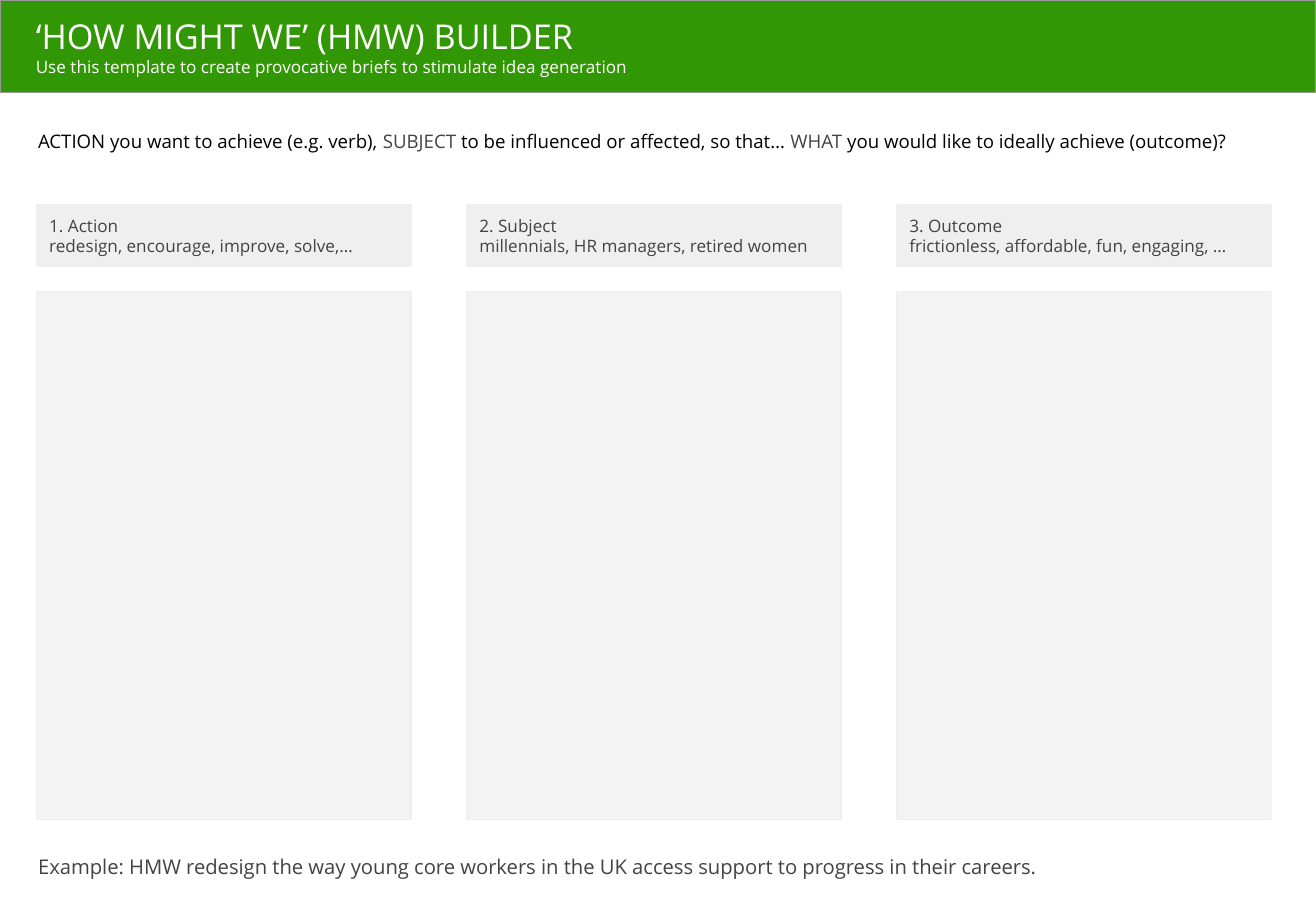
from pptx import Presentation
from pptx.dml.color import RGBColor
from pptx.enum.shapes import MSO_SHAPE
from pptx.enum.text import MSO_ANCHOR, PP_ALIGN
from pptx.util import Inches, Pt

RECTANGLE = MSO_SHAPE.RECTANGLE
MIDDLE = MSO_ANCHOR.MIDDLE
TOP = MSO_ANCHOR.TOP
LEFT = PP_ALIGN.LEFT

FONT = "Open Sans"
WHITE, BLACK, DARK_GREY = "FFFFFF", "000000", "434343"
GREEN, MID_GREY, LIGHT_GREY, PALE_GREY = "319704", "999999", "EFEFEF", "F3F3F3"

prs = Presentation()
prs.slide_width, prs.slide_height = Inches(11.75), Inches(8.25)
slide = prs.slides.add_slide(prs.slide_layouts[6])


def add_panel(left, top, width, height, fill, line):
    panel = slide.shapes.add_shape(
        RECTANGLE, Inches(left), Inches(top), Inches(width), Inches(height))
    panel.shadow.inherit = False
    panel.fill.solid()
    panel.fill.fore_color.rgb = RGBColor.from_string(fill)
    panel.line.color.rgb = RGBColor.from_string(line)
    panel.line.width = Pt(0.75)
    return panel


def write(shape, paragraphs, anchor=TOP):
    """Fill a shape with paragraphs, each a size and a list of (text, colour) runs."""
    frame = shape.text_frame
    frame.word_wrap = True
    frame.vertical_anchor = anchor
    frame.margin_left = frame.margin_right = Inches(0.11)
    frame.margin_top = frame.margin_bottom = Inches(0.11)
    for index, (size, runs) in enumerate(paragraphs):
        paragraph = frame.add_paragraph() if index else frame.paragraphs[0]
        paragraph.alignment = LEFT
        paragraph.font.name = FONT
        paragraph.font.size = Pt(size)
        for text, color in runs:
            run = paragraph.add_run()
            run.text = text
            run.font.color.rgb = RGBColor.from_string(color)


# Header band and the free text
add_panel(0, 0, 11.75, 0.83, GREEN, MID_GREY)

texts = [
    ((0.21, 0.03, 6.57, 0.78), [
        (22, [("‘HOW MIGHT WE’ (HMW) BUILDER", WHITE)]),
        (11, [("Use this template to create provocative briefs to stimulate idea generation", WHITE)]),
    ]),
    ((0.23, 1.06, 11.28, 0.42), [
        (12, [
            ("ACTION you want to achieve (e.g. verb), ", BLACK),
            ("SUBJECT", DARK_GREY),
            (" to be influenced or affected, so that… ", BLACK),
            ("WHAT", DARK_GREY),
            (" you would like to ideally achieve (outcome)?", BLACK),
        ]),
    ]),
    ((0.23, 7.52, 11.11, 0.44), [
        (13, [("Example: HMW redesign the way young core workers in the UK access "
               "support to progress in their careers.", DARK_GREY)]),
    ]),
]
for box, paragraphs in texts:
    write(slide.shapes.add_textbox(*map(Inches, box)), paragraphs)

# Three columns: a heading above an empty working area
COLUMN_LEFT, COLUMN_WIDTH, COLUMN_GAP = 0.33, 3.34, 0.5
columns = [
    ("1. Action", "redesign, encourage, improve, solve,…"),
    ("2. Subject", "millennials, HR managers, retired women"),
    ("3. Outcome", "frictionless, affordable, fun, engaging, …"),
]
for number, lines in enumerate(columns):
    left = COLUMN_LEFT + number * (COLUMN_WIDTH + COLUMN_GAP)
    heading = add_panel(left, 1.83, COLUMN_WIDTH, 0.55, LIGHT_GREY, LIGHT_GREY)
    write(heading, [(11, [(line, DARK_GREY)]) for line in lines], MIDDLE)
    add_panel(left, 2.6, COLUMN_WIDTH, 4.72, PALE_GREY, LIGHT_GREY)

prs.save("out.pptx")
